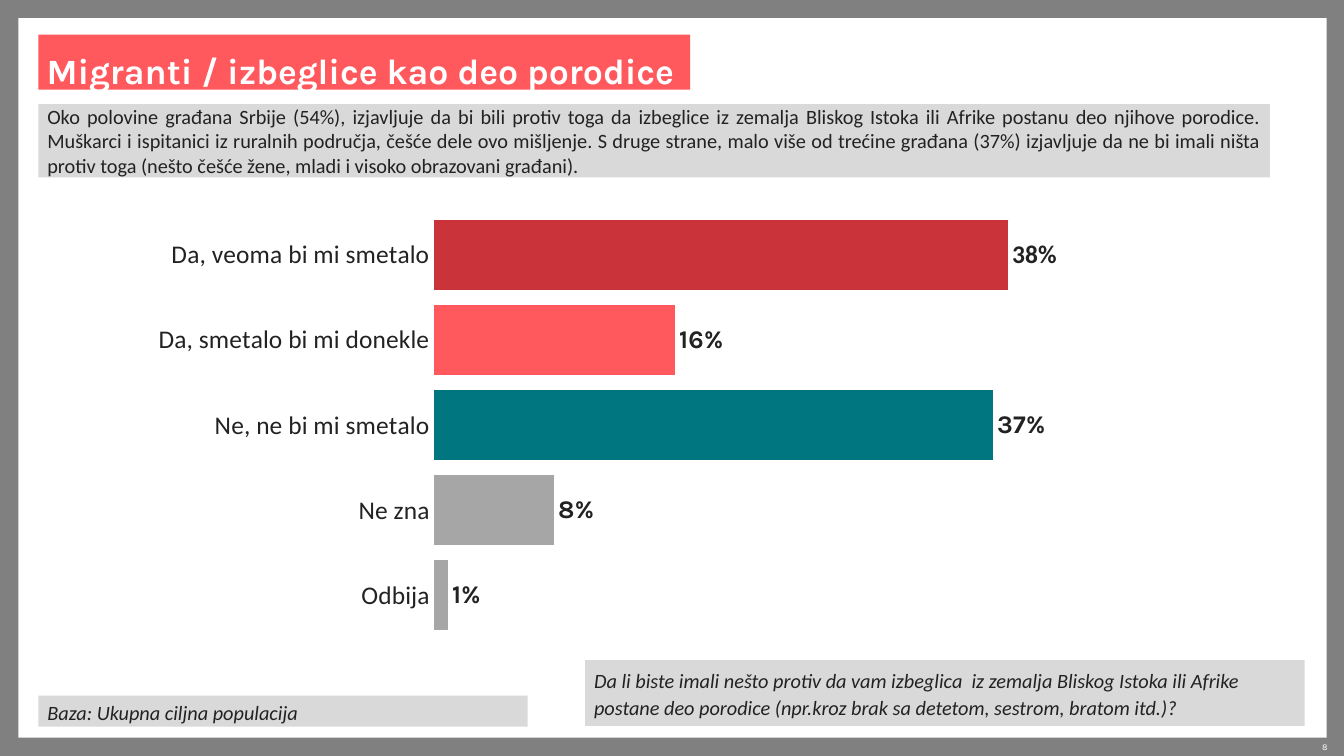
from lxml import etree
from pptx import Presentation
from pptx.chart.data import CategoryChartData
from pptx.dml.color import RGBColor
from pptx.enum.chart import XL_CHART_TYPE, XL_LABEL_POSITION, XL_TICK_MARK
from pptx.enum.shapes import MSO_SHAPE
from pptx.enum.text import MSO_ANCHOR, PP_ALIGN
from pptx.oxml.ns import qn
from pptx.util import Pt

PX = 9144  # 100 px to the inch
SLIDE_WIDTH, SLIDE_HEIGHT = 1470, 827
COLORS = {
    "frame": "808080", "white": "FFFFFF", "coral": "FF585D", "panel": "D9D9D9",
    "text": "222223", "red": "CB333B", "teal": "007681", "gray": "A6A6A6",
}

BODY = {"size": 16, "font": "Calibri", "color": "text"}
NOTE = {**BODY, "italic": True, "line": 1.1, "space": 6}
TITLE = {"size": 28, "font": "Karla", "color": "white", "bold": True,
         "line": Pt(41), "wrap": False, "insets": (9, 8, 9, 0)}
NUMBER = {"size": 7, "font": "Karla", "color": "white", "line": 1.1,
          "align": PP_ALIGN.RIGHT, "insets": (0, 0, 0, 0)}

# text, (left, top, width, height), fill, style
PANELS = [
    ("Migranti / izbeglice kao deo porodice", (42, 38, 713, 60), "coral", TITLE),
    ("Oko polovine građana Srbije (54%), izjavljuje da bi bili protiv toga da "
     "izbeglice iz zemalja Bliskog Istoka ili Afrike postanu deo njihove porodice. "
     "Muškarci i ispitanici iz ruralnih područja, češće dele ovo mišljenje. "
     "S druge strane, malo više od trećine građana (37%) izjavljuje da ne bi imali "
     "ništa protiv toga (nešto češće žene, mladi i visoko obrazovani građani).",
     (42, 114, 1347, 80), "panel", {**BODY, "align": PP_ALIGN.JUSTIFY}),
    ("Baza: Ukupna ciljna populacija", (42, 761, 535, 34), "panel", NOTE),
    ("Da li biste imali nešto protiv da vam izbeglica  iz zemalja Bliskog Istoka ili "
     "Afrike postane deo porodice (npr.kroz brak sa detetom, sestrom, bratom itd.)?",
     (640, 722, 787, 72), "panel", NOTE),
]
SLIDE_NUMBER = ("8", (1373, 810, 79, 13), NUMBER)

ANSWERS = [
    ("Da, veoma bi mi smetalo", 38, "red"),
    ("Da, smetalo bi mi donekle", 16, "coral"),
    ("Ne, ne bi mi smetalo", 37, "teal"),
    ("Ne zna", 8, "gray"),
    ("Odbija", 1, "gray"),
]
CHART_BOX = (152, 232, 1150, 466)
PLOT_AREA = {"x": 0.28, "y": 0, "w": 0.72, "h": 1}
PERCENT = '#"%"'


def rgb(name):
    return RGBColor.from_string(COLORS[name])


def emu(box):
    return [length * PX for length in box]


def set_font(font, size, name, color, bold=False, italic=False):
    font.size, font.name = Pt(size), name
    font.bold, font.italic = bold, italic
    font.color.rgb = rgb(color)


def write(shape, text, style):
    frame = shape.text_frame
    frame.word_wrap = style.get("wrap", True)
    frame.vertical_anchor = MSO_ANCHOR.MIDDLE
    (frame.margin_left, frame.margin_top,
     frame.margin_right, frame.margin_bottom) = emu(style.get("insets", (10, 0, 10, 0)))
    paragraph = frame.paragraphs[0]
    paragraph.text = text
    paragraph.alignment = style.get("align", PP_ALIGN.LEFT)
    paragraph.line_spacing = style.get("line", 1.0)
    paragraph.space_before = paragraph.space_after = Pt(style.get("space", 0))
    set_font(paragraph.font, style["size"], style["font"], style["color"],
             style.get("bold", False), style.get("italic", False))


def add_panel(slide, box, fill):
    shape = slide.shapes.add_shape(MSO_SHAPE.RECTANGLE, *emu(box))
    shape.shadow.inherit = False
    shape.fill.solid()
    shape.fill.fore_color.rgb = rgb(fill)
    shape.line.fill.background()
    return shape


def set_plot_layout(chart):
    """Fix the inner plot area as fractions of the chart."""
    plot_area = chart.plots[0]._element.getparent()
    for old in plot_area.findall(qn("c:layout")):
        plot_area.remove(old)
    layout = etree.Element(qn("c:layout"))
    plot_area.insert(0, layout)
    manual = etree.SubElement(layout, qn("c:manualLayout"))
    settings = {"layoutTarget": "inner", "xMode": "edge", "yMode": "edge", **PLOT_AREA}
    for tag, value in settings.items():
        etree.SubElement(manual, qn(f"c:{tag}")).set("val", str(value))


def add_answer_chart(slide):
    data = CategoryChartData(number_format=PERCENT)
    data.categories = [answer for answer, _, _ in ANSWERS]
    data.add_series("Series 1", [share for _, share, _ in ANSWERS])
    chart = slide.shapes.add_chart(XL_CHART_TYPE.BAR_CLUSTERED, *emu(CHART_BOX), data).chart
    chart.has_legend = chart.has_title = False
    set_font(chart.font, 18, "Karla", "text")
    set_plot_layout(chart)

    categories, values = chart.category_axis, chart.value_axis
    categories.reverse_order = True
    categories.major_tick_mark = XL_TICK_MARK.NONE
    categories.format.line.fill.background()
    set_font(categories.tick_labels.font, 20, "Calibri", "text")
    values.minimum_scale, values.maximum_scale = 0, 50
    values.has_major_gridlines = values.visible = False

    plot = chart.plots[0]
    plot.gap_width = 20
    plot.vary_by_categories = False
    series = plot.series[0]
    labels = series.data_labels
    labels.show_value = True
    labels.position = XL_LABEL_POSITION.OUTSIDE_END
    labels.number_format, labels.number_format_is_linked = PERCENT, False
    set_font(labels.font, 20, "Karla", "text", bold=True)
    for index, (_, _, color) in enumerate(ANSWERS):
        bar = series.points[index].format
        bar.fill.solid()
        bar.fill.fore_color.rgb = rgb(color)
        bar.line.color.rgb = rgb("white")
        bar.line.width = Pt(0.75)
    first_label = series.points[0].data_label
    first_label.position = XL_LABEL_POSITION.OUTSIDE_END
    set_font(first_label.font, 20, "Calibri", "text", bold=True)


def main():
    presentation = Presentation()
    presentation.slide_width, presentation.slide_height = emu((SLIDE_WIDTH, SLIDE_HEIGHT))
    slide = presentation.slides.add_slide(presentation.slide_layouts[6])
    slide.background.fill.solid()
    slide.background.fill.fore_color.rgb = rgb("frame")

    add_panel(slide, (20, 20, 1431, 787), "white")
    for text, box, fill, style in PANELS:
        write(add_panel(slide, box, fill), text, style)
    add_answer_chart(slide)
    number, box, style = SLIDE_NUMBER
    write(slide.shapes.add_textbox(*emu(box)), number, style)
    presentation.save("out.pptx")


if __name__ == "__main__":
    main()
